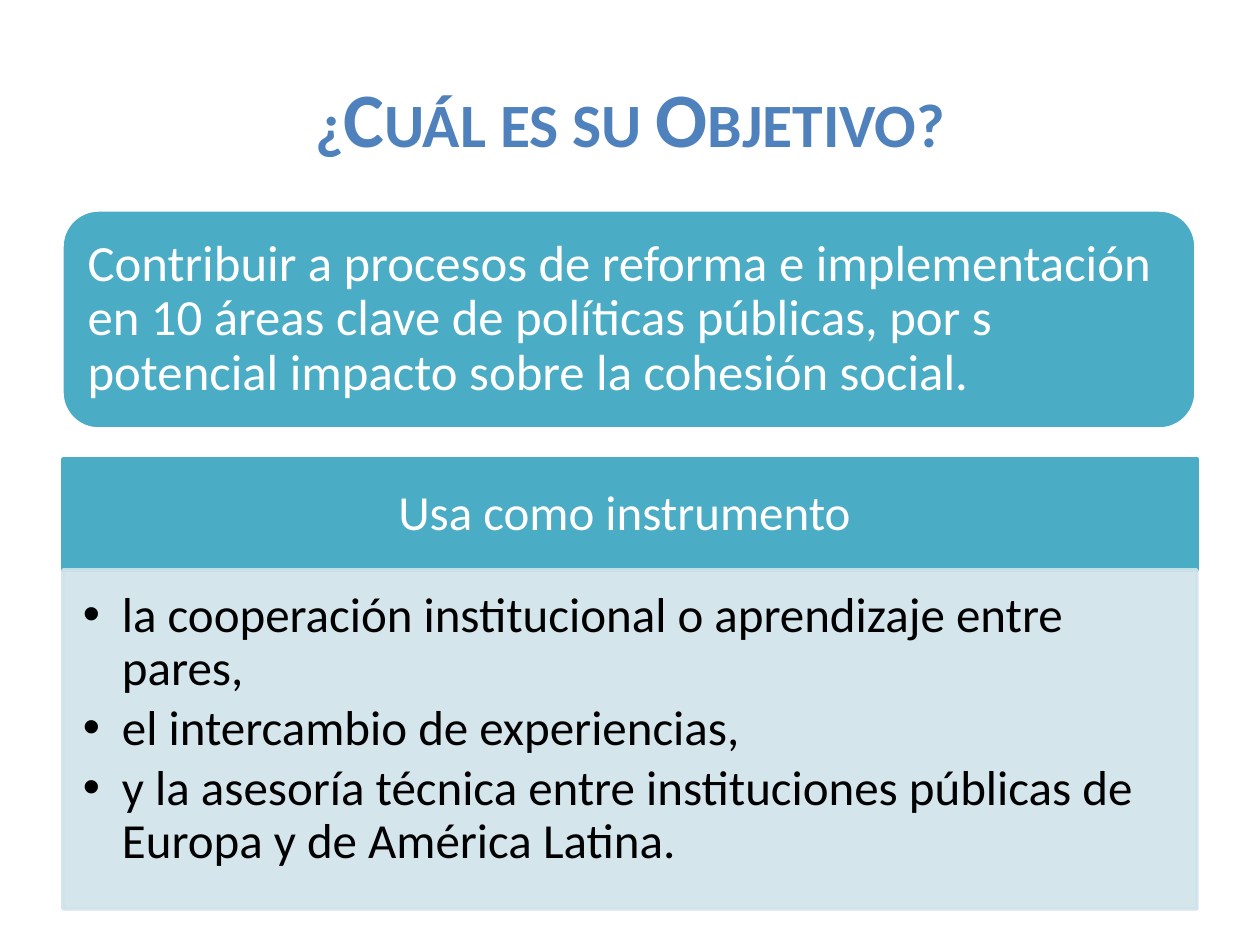
from lxml.etree import SubElement
from pptx import Presentation
from pptx.dml.color import RGBColor
from pptx.enum.shapes import MSO_SHAPE
from pptx.enum.text import MSO_ANCHOR, MSO_AUTO_SIZE, PP_ALIGN
from pptx.oxml.ns import qn
from pptx.util import Emu, Pt

BLUE, TEAL, PALE, WHITE, BLACK = "4F81BD", "4BACC6", "D0E3EA", "FFFFFF", "000000"
LEFT, WIDTH = 63, 1134
TITLE = "¿Cuál es su Objetivo?"
GOAL = ("Contribuir a procesos de reforma e implementación en 10 áreas clave de "
        "políticas públicas, por s potencial impacto sobre la cohesión social.")
INSTRUMENTS_HEADING = "Usa como instrumento "
INSTRUMENTS = [
    "la cooperación institucional o aprendizaje entre pares,",
    "el intercambio de experiencias,",
    "y la asesoría técnica entre instituciones públicas de Europa y de América Latina.",
]


def px(value):
    return Emu(round(value * 914400 / 126))


def color(hex_value):
    return RGBColor.from_string(hex_value)


def place(shape, left, top, width, height):
    shape.left, shape.top = px(left), px(top)
    shape.width, shape.height = px(width), px(height)


def paint(shape, fill, line):
    shape.fill.solid()
    shape.fill.fore_color.rgb = color(fill)
    shape.line.color.rgb = color(line)
    shape.line.width = Pt(2)


def write(shape, lines, size, hex_value, align, anchor, insets, space_after=0):
    """Fill a shape with paragraphs; insets are left, top, right, bottom."""
    frame = shape.text_frame
    frame.text = "\n".join(lines)
    frame.word_wrap = True
    frame.auto_size = MSO_AUTO_SIZE.NONE
    frame.vertical_anchor = anchor
    (frame.margin_left, frame.margin_top,
     frame.margin_right, frame.margin_bottom) = map(px, insets)
    for paragraph in frame.paragraphs:
        paragraph.alignment = align
        paragraph.line_spacing = 0.9
        paragraph.space_before = Pt(0)
        paragraph.space_after = Pt(space_after)
        paragraph.font.name = "Calibri"
        paragraph.font.size = Pt(size)
        paragraph.font.color.rgb = color(hex_value)


def add_title(slide):
    title = slide.shapes.title
    place(title, LEFT, 38, WIDTH, 158)
    write(title, [TITLE], 44, BLUE, PP_ALIGN.CENTER, MSO_ANCHOR.MIDDLE, (13, 6, 13, 6))
    paragraph = title.text_frame.paragraphs[0]
    paragraph.line_spacing = 1.0
    paragraph.font.bold = True
    for properties in title.element.iter(qn("a:defRPr")):
        properties.set("cap", "small")


def add_box(slide, preset, box, fill, line):
    shape = slide.shapes.add_shape(preset, *map(px, box))
    shape.shadow.inherit = False
    paint(shape, fill, line)
    return shape


def add_bullet_panel(slide):
    panel = slide.placeholders[1]
    place(panel, LEFT, 570, WIDTH, 339)
    paint(panel, PALE, PALE)
    for fill_color in panel.element.spPr.iter(qn("a:srgbClr")):
        SubElement(fill_color, qn("a:alpha"), val="90000")
    write(panel, INSTRUMENTS, 28, BLACK, PP_ALIGN.LEFT, MSO_ANCHOR.TOP,
          (20, 20, 28, 30), space_after=4.2)
    for properties in panel.element.iter(qn("a:pPr")):
        properties.set("marL", str(px(39)))
        properties.set("indent", str(-px(39)))
    # Bring the panel in front of the heading band
    panel.element.getparent().append(panel.element)


def main():
    presentation = Presentation()
    presentation.slide_width, presentation.slide_height = px(1260), px(945)
    slide = presentation.slides.add_slide(presentation.slide_layouts[1])

    add_title(slide)
    heading = add_box(slide, MSO_SHAPE.RECTANGLE, (LEFT, 459, WIDTH, 111), TEAL, TEAL)
    write(heading, [INSTRUMENTS_HEADING], 28, WHITE, PP_ALIGN.CENTER,
          MSO_ANCHOR.MIDDLE, (28, 15, 28, 15), space_after=9.8)
    add_bullet_panel(slide)
    goal = add_box(slide, MSO_SHAPE.ROUNDED_RECTANGLE, (62, 210, WIDTH, 219), TEAL, WHITE)
    write(goal, [GOAL], 29, WHITE, PP_ALIGN.LEFT, MSO_ANCHOR.MIDDLE,
          (15, 15, 15, 15), space_after=10.15)

    presentation.save("out.pptx")


if __name__ == "__main__":
    main()
